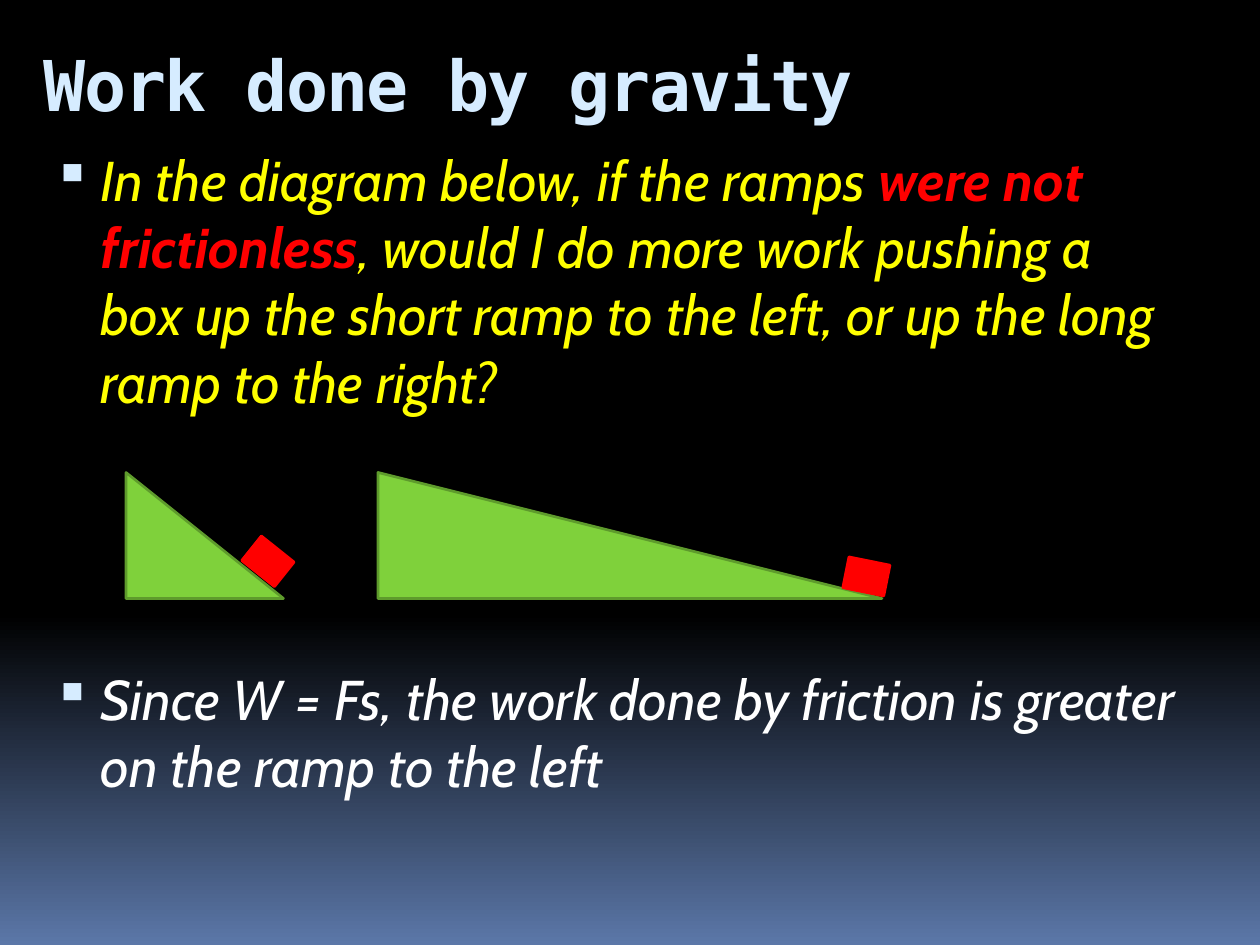
from dataclasses import dataclass
from typing import Any

from lxml import etree
from pptx import Presentation
from pptx import util as u
from pptx.dml.color import RGBColor
from pptx.enum import shapes, text
from pptx.oxml import ns

BLACK = RGBColor(0x00, 0x00, 0x00)
WHITE = RGBColor(0xFF, 0xFF, 0xFF)
DUSK = RGBColor(0x5B, 0x77, 0xA8)
ICE = RGBColor(0xD6, 0xEC, 0xFF)
YELLOW = RGBColor(0xFF, 0xFF, 0x00)
RED = RGBColor(0xFF, 0x00, 0x00)
GREEN = RGBColor(0x7F, 0xD1, 0x3B)
DARK_GREEN = RGBColor(0x5E, 0x9B, 0x2C)


def add_run(paragraph, words, *, font, size, color, bold=False, italic=False, spacing=0):
    run = paragraph.add_run()
    run.text = words
    run.font.name, run.font.size = font, u.Pt(size)
    run.font.bold, run.font.italic = bold, italic
    run.font.color.rgb = color
    if spacing:
        run.font._element.set("spc", str(spacing * 100))


@dataclass
class Deck:
    """Style and current slide, measured on a grid of 40 columns by 30 rows."""

    slide: Any
    cell: Any = u.Inches(0.25)
    heading_font: str = "DejaVu Sans Mono"
    body_font: str = "Cabin"

    def grid(self, *lengths):
        return [round(length * self.cell) for length in lengths]

    def background(self, start, end, hold):
        fill = self.slide.background.fill
        fill.gradient()
        fill.gradient_angle = 270
        for stop, color, position in zip(fill.gradient_stops, (start, end), (hold, 1)):
            stop.color.rgb = color
            stop.position = position

    def text_area(self, row, rows):
        frame = self.slide.shapes.add_textbox(*self.grid(1, row, 37, rows)).text_frame
        frame.word_wrap = True
        frame.vertical_anchor = text.MSO_ANCHOR.TOP
        frame.margin_top = frame.margin_bottom = 0
        return frame.paragraphs[0]

    def title(self, words, row):
        add_run(self.text_area(row, 3), words, font=self.heading_font, size=40,
                color=ICE, bold=True, spacing=-1)

    def bullet(self, row, rows, *parts):
        paragraph = self.text_area(row, rows)
        props = paragraph._p.get_or_add_pPr()
        props.set("marL", str(u.Inches(0.45)))
        props.set("indent", str(-u.Inches(0.38)))
        color = etree.SubElement(props, ns.qn("a:buClr"))
        etree.SubElement(color, ns.qn("a:srgbClr"), val=str(ICE))
        etree.SubElement(props, ns.qn("a:buSzPct"), val="95000")
        etree.SubElement(props, ns.qn("a:buChar"), char="▪")
        for words, tint, bold in parts:
            add_run(paragraph, words, font=self.body_font, size=32, color=tint,
                    bold=bold, italic=True)

    def figure(self, group, kind, box, fill, line, rotation=0):
        shape = group.shapes.add_shape(kind, *self.grid(*box))
        shape.shadow.inherit = False
        shape.rotation = rotation
        shape.fill.solid()
        shape.fill.fore_color.rgb = fill
        shape.line.color.rgb = line
        shape.line.width = u.Pt(1.5)

    def ramps(self, ramps, crates):
        group = self.slide.shapes.add_group_shape()
        for column, columns in ramps:
            self.figure(group, shapes.MSO_SHAPE.RIGHT_TRIANGLE, (column, 15, columns, 4),
                        GREEN, DARK_GREEN)
        for column, row, rotation in crates:
            self.figure(group, shapes.MSO_SHAPE.RECTANGLE, (column, row, 1.33, 1),
                        RED, RED, rotation)


def main():
    presentation = Presentation()
    presentation.slide_width, presentation.slide_height = u.Inches(10), u.Inches(7.5)
    deck = Deck(presentation.slides.add_slide(presentation.slide_layouts[6]))
    deck.background(BLACK, DUSK, 0.65)
    deck.title("Work done by gravity", 1.33)
    deck.bullet(
        4.62, 9,
        ("In the diagram below, if the ramps ", YELLOW, False),
        ("were not frictionless", RED, True),
        (", would I do more work pushing a box up the short ramp to the left, "
         "or up the long ramp to the right?", YELLOW, False),
    )
    deck.ramps(ramps=[(4, 5), (12, 16)], crates=[(7.84, 17.32, 38.6), (26.84, 17.8, 11.4)])
    deck.bullet(
        21.1, 5,
        ("Since W = Fs, the work done by friction is greater on the ramp to the left",
         WHITE, False),
    )
    presentation.save("out.pptx")


if __name__ == "__main__":
    main()
